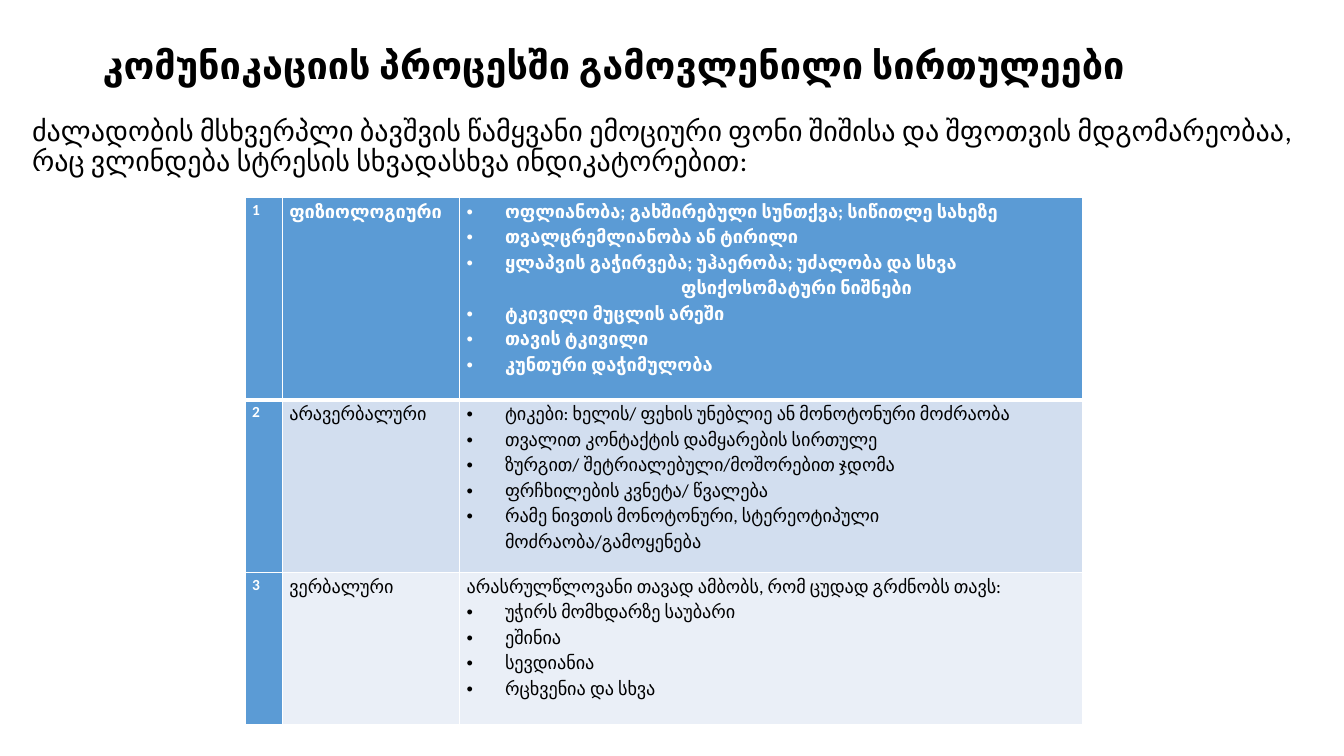
from lxml import etree
from pptx import Presentation
from pptx.dml.color import RGBColor
from pptx.enum.text import MSO_ANCHOR, PP_ALIGN
from pptx.oxml.ns import qn
from pptx.util import Inches, Pt

JUSTIFY, CENTER, LEFT = PP_ALIGN.JUSTIFY, PP_ALIGN.CENTER, PP_ALIGN.LEFT
TOP, MIDDLE = MSO_ANCHOR.TOP, MSO_ANCHOR.MIDDLE

FONT = "Calibri"
COLORS = {
    "black": "000000",
    "white": "FFFFFF",
    "blue": "5B9BD5",
    "band_dark": "D2DEEF",
    "band_light": "EAEFF7",
}

TITLE = "კომუნიკაციის პროცესში გამოვლენილი სირთულეები"
INTRO = ("ძალადობის მსხვერპლი ბავშვის წამყვანი ემოციური ფონი შიშისა და შფოთვის "
         "მდგომარეობაა, რაც ვლინდება სტრესის სხვადასხვა ინდიკატორებით:")

# Line kinds: alignment, left margin, first-line indent, bullet
BULLET = (JUSTIFY, 0.38, -0.38, True)
LEFT_BULLET = (LEFT, 0.38, -0.38, True)
CONTINUED = (CENTER, 0.5, 0, False)
PLAIN = (JUSTIFY, 0, 0, False)

# Indicator group, band colour, lines with their kind
INDICATORS = [
    ("ფიზიოლოგიური", "blue", [
        ("ოფლიანობა; გახშირებული სუნთქვა; სიწითლე სახეზე", BULLET),
        ("თვალცრემლიანობა ან ტირილი", BULLET),
        ("ყლაპვის გაჭირვება; უჰაერობა; უძალობა და სხვა", BULLET),
        ("ფსიქოსომატური ნიშნები", CONTINUED),
        ("ტკივილი მუცლის არეში", LEFT_BULLET),
        ("თავის ტკივილი", LEFT_BULLET),
        ("კუნთური დაჭიმულობა", LEFT_BULLET),
    ]),
    ("არავერბალური", "band_dark", [
        ("ტიკები: ხელის/ ფეხის უნებლიე ან მონოტონური მოძრაობა", BULLET),
        ("თვალით კონტაქტის დამყარების სირთულე", BULLET),
        ("ზურგით/ შეტრიალებული/მოშორებით ჯდომა", BULLET),
        ("ფრჩხილების კვნეტა/ წვალება", BULLET),
        ("რამე ნივთის მონოტონური, სტერეოტიპული მოძრაობა/გამოყენება", LEFT_BULLET),
    ]),
    ("ვერბალური", "band_light", [
        ("არასრულწლოვანი თავად ამბობს, რომ ცუდად გრძნობს თავს:", PLAIN),
        ("უჭირს მომხდარზე საუბარი", BULLET),
        ("ეშინია", BULLET),
        ("სევდიანია", BULLET),
        ("რცხვენია და სხვა", BULLET),
    ]),
]
COLUMN_WIDTHS = [0.37, 1.76, 6.18]
ROW_HEIGHTS = [2.01, 1.71, 1.51]


def rgb(color):
    return RGBColor.from_string(COLORS[color])


def style_font(paragraph, size, color, bold):
    for run in paragraph.runs:
        run.font.name = FONT
        run.font.size = Pt(size)
        run.font.bold = bold
        run.font.color.rgb = rgb(color)


def add_text(slide, box, text, size, bold=False, anchor=TOP, space_before=0):
    frame = slide.shapes.add_textbox(*map(Inches, box)).text_frame
    frame.word_wrap = True
    frame.vertical_anchor = anchor
    frame.text = text
    paragraph = frame.paragraphs[0]
    paragraph.line_spacing = 0.9
    paragraph.space_before = Pt(space_before)
    style_font(paragraph, size, "black", bold)


def set_borders(cell, bottom_width):
    properties = cell._tc.get_or_add_tcPr()
    for side, width in (("L", 1), ("R", 1), ("T", 1), ("B", bottom_width)):
        line = etree.SubElement(properties, qn(f"a:ln{side}"), w=str(Pt(width)))
        fill = etree.SubElement(line, qn("a:solidFill"))
        etree.SubElement(fill, qn("a:srgbClr"), val=COLORS["white"])


def fill_cell(cell, lines, size, fill, bold, bottom_width):
    set_borders(cell, bottom_width)
    cell.fill.solid()
    cell.fill.fore_color.rgb = rgb(fill)
    cell.margin_left = cell.margin_right = Inches(0.07)
    cell.margin_top = cell.margin_bottom = 0
    cell.text_frame.text = "\n".join(text for text, _ in lines)
    color = "white" if fill == "blue" else "black"
    for paragraph, (_, kind) in zip(cell.text_frame.paragraphs, lines):
        alignment, margin, indent, bulleted = kind
        paragraph.alignment = alignment
        paragraph.line_spacing = 1.15
        style_font(paragraph, size, color, bold)
        properties = paragraph._p.get_or_add_pPr()
        properties.set("marL", str(Inches(margin)))
        properties.set("indent", str(Inches(indent)))
        if bulleted:
            etree.SubElement(properties, qn("a:buFont"), typeface="Arial")
            etree.SubElement(properties, qn("a:buChar"), char="•")


def add_indicator_table(slide, box):
    table = slide.shapes.add_table(
        len(INDICATORS), len(COLUMN_WIDTHS), *map(Inches, box)).table
    for column, width in zip(table.columns, COLUMN_WIDTHS):
        column.width = Inches(width)
    for row, height in zip(table.rows, ROW_HEIGHTS):
        row.height = Inches(height)

    for index, (group, band, signs) in enumerate(INDICATORS):
        number_cell, group_cell, signs_cell = table.rows[index].cells
        is_header = index == 0
        bottom_width = 3 if is_header else 1
        fill_cell(number_cell, [(str(index + 1), PLAIN)], 11, "blue", True, bottom_width)
        fill_cell(group_cell, [(group, PLAIN)], 13, band, is_header, bottom_width)
        fill_cell(signs_cell, signs, 13, band, is_header, bottom_width)


def main():
    presentation = Presentation()
    presentation.slide_width = Inches(13.33)
    presentation.slide_height = Inches(7.5)
    slide = presentation.slides.add_slide(presentation.slide_layouts[6])

    # Heading and introduction
    add_text(slide, (0.92, 0.4, 11.5, 0.54), TITLE, 27, bold=True, anchor=MIDDLE)
    add_text(slide, (0.22, 1.11, 12.83, 6.1), INTRO, 20, space_before=10)

    # Stress indicators
    add_indicator_table(slide, (2.43, 1.96, sum(COLUMN_WIDTHS), sum(ROW_HEIGHTS)))

    presentation.save("out.pptx")


if __name__ == "__main__":
    main()
